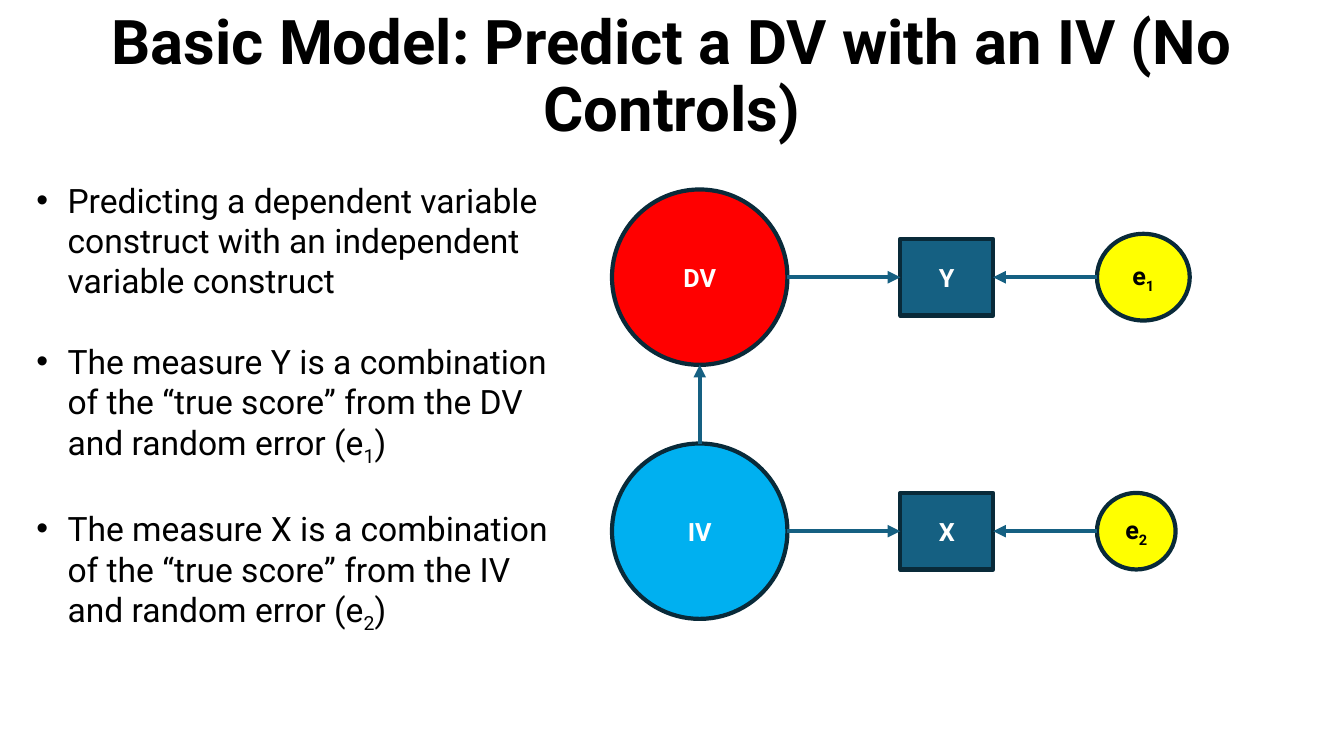
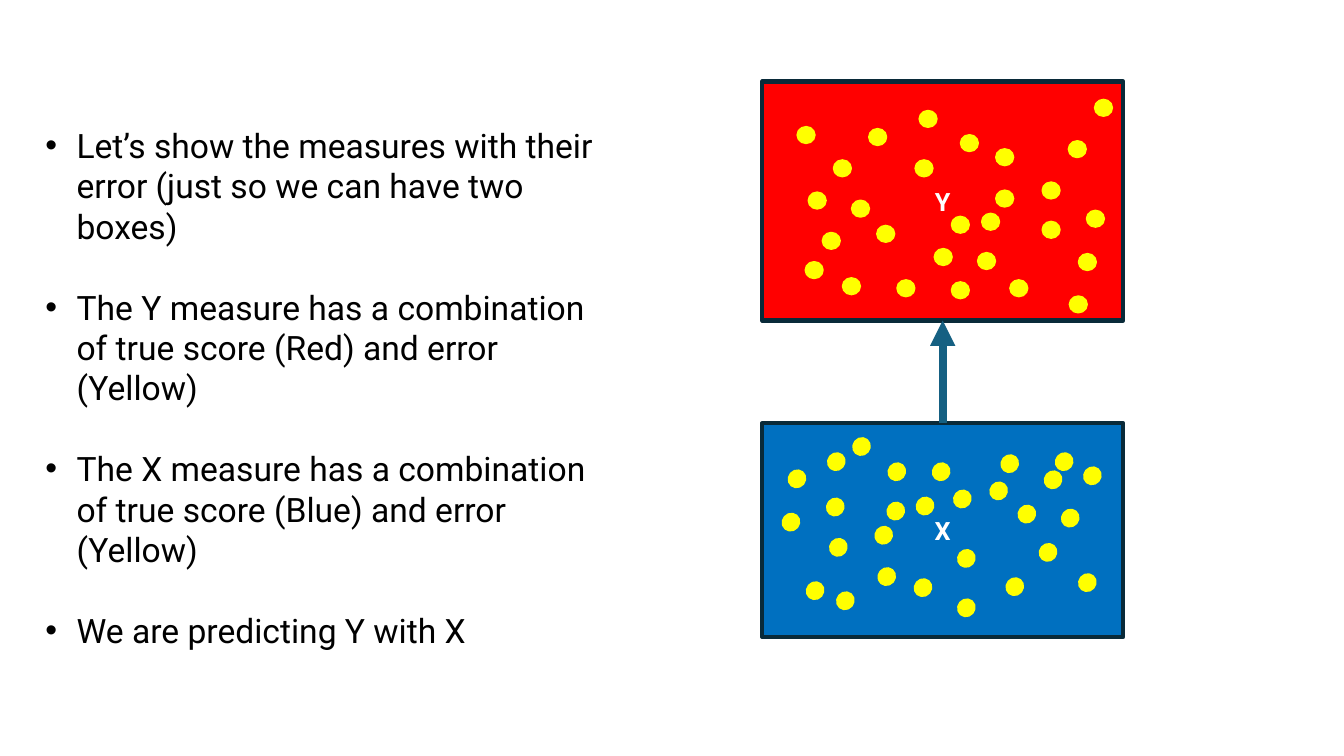
from lxml.etree import SubElement
from pptx import Presentation
from pptx.dml.color import RGBColor
from pptx.enum.shapes import MSO_CONNECTOR, MSO_SHAPE
from pptx.enum.text import MSO_ANCHOR, MSO_AUTO_SIZE, PP_ALIGN
from pptx.oxml.ns import qn
from pptx.util import Pt

PX = 9144  # 100 px to the inch
BLACK = RGBColor(0x00, 0x00, 0x00)
WHITE = RGBColor(0xFF, 0xFF, 0xFF)
RED = RGBColor(0xFF, 0x00, 0x00)
SKY = RGBColor(0x00, 0xB0, 0xF0)
BLUE = RGBColor(0x00, 0x70, 0xC0)
TEAL = RGBColor(0x15, 0x60, 0x82)
NAVY = RGBColor(0x09, 0x2A, 0x39)
YELLOW = RGBColor(0xFF, 0xFF, 0x00)

TITLE_FONT = {"name": "Roboto", "size": Pt(44), "bold": True}
BULLET_FONT = {"name": "Roboto", "size": Pt(24), "bold": False}
LABEL_FONT = {"name": "Roboto", "size": Pt(18), "bold": True}
FRAME = {"word_wrap": True, "auto_size": MSO_AUTO_SIZE.NONE}
RECT, OVAL = MSO_SHAPE.RECTANGLE, MSO_SHAPE.OVAL


def write(paragraph, text, fonts, colour, align, spacing=1.0):
    """Write text; every second part between underscores is a subscript."""
    paragraph.alignment = align
    paragraph.line_spacing = spacing
    for i, part in enumerate(text.split("_")):
        run = paragraph.add_run()
        run.text = part
        for key, value in fonts.items():
            setattr(run.font, key, value)
        run.font.color.rgb = colour
        if i % 2:
            run.font._element.set("baseline", "-25000")


def add_figure(slide, kind, box, fill, label="", ink=WHITE, line=NAVY, weight=3):
    figure = slide.shapes.add_shape(kind, *(v * PX for v in box))
    figure.shadow.inherit = False
    figure.fill.solid()
    figure.fill.fore_color.rgb = fill
    figure.line.color.rgb = line
    figure.line.width = Pt(weight)
    if label:
        figure.text_frame.vertical_anchor = MSO_ANCHOR.MIDDLE
        write(figure.text_frame.paragraphs[0], label, LABEL_FONT, ink, PP_ALIGN.CENTER)
    return figure


deck = Presentation()
deck.slide_width, deck.slide_height = 1333 * PX, 750 * PX

# Titles and bullet lists
pages = [
    ("Basic Model: Predict a DV with an IV (No Controls)", (26, 173, 537, 485), [
        "Predicting a dependent variable construct with an independent variable construct",
        "The measure Y is a combination of the “true score” from the DV and random error (e_1_)",
        "The measure X is a combination of the “true score” from the IV and random error (e_2_)",
    ]),
    (None, (35, 119, 569, 535), [
        "Let’s show the measures with their error (just so we can have two boxes)",
        "The Y measure has a combination of true score (Red) and error (Yellow)",
        "The X measure has a combination of true score (Blue) and error (Yellow)",
        "We are predicting Y with X",
    ]),
]
for heading, list_box, bullets in pages:
    slide = deck.slides.add_slide(deck.slide_layouts[1])
    title, body = slide.placeholders
    for holder, box, anchor in ((title, (0, 5, 1333, 145), MSO_ANCHOR.MIDDLE),
                                (body, list_box, MSO_ANCHOR.TOP)):
        holder.left, holder.top, holder.width, holder.height = (v * PX for v in box)
        for key, value in {**FRAME, "vertical_anchor": anchor}.items():
            setattr(holder.text_frame, key, value)
    if heading:
        write(title.text_frame.paragraphs[0], heading, TITLE_FONT, BLACK,
              PP_ALIGN.CENTER, 0.9)
    else:
        title._element.getparent().remove(title._element)
    for i, bullet in enumerate(bullets):
        item = body.text_frame.add_paragraph() if i else body.text_frame.paragraphs[0]
        props = item._p.get_or_add_pPr()
        props.set("marL", str(31 * PX))
        props.set("indent", str(-31 * PX))
        item.space_before = Pt(29 if i else 0)
        write(item, bullet, BULLET_FONT, BLACK, PP_ALIGN.LEFT)

model, measures = deck.slides
arrows = []  # slide, start, end, shape at start, shape at end, sides, weight

# Model: one row for each construct, its measure and its error
rows = [
    (275, "DV", RED, "Y", "e_1", 92, 86),
    (527, "IV", SKY, "X", "e_2", 78, 76),
]
constructs = []
for mid, construct, fill, measure, error, error_w, error_h in rows:
    constructs.append(add_figure(model, OVAL, (607, mid - 87, 174, 174), fill, construct))
    square = add_figure(model, RECT, (893, mid - 38, 92, 76), TEAL, measure)
    add_figure(model, OVAL, (1088, mid - error_h // 2, error_w, error_h), YELLOW, error, BLACK)
    arrows.append((model, (781, mid), (893, mid), None, square, (0, 1), 3))
    arrows.append((model, (1088, mid), (985, mid), None, square, (0, 3), 3))
arrows.append((model, (694, 440), (694, 362), constructs[1], None, (0, 0), 3))

# Measures: true score boxes sprinkled with error dots
y_dots = [
    (791, 126), (827, 159), (862, 128), (908, 159), (953, 134), (988, 148), (1034, 181),
    (1060, 140), (1086, 99), (988, 189), (890, 278), (836, 276), (799, 260), (816, 231),
    (845, 199), (870, 224), (802, 191), (927, 247), (944, 215), (974, 212), (1034, 220),
    (1078, 209), (1070, 252), (1061, 294), (1002, 278), (970, 251), (944, 280), (912, 110),
]
x_dots = [
    (1070, 570), (1031, 540), (998, 574), (950, 546), (907, 575), (871, 564), (823, 535),
    (800, 578), (830, 588), (868, 523), (993, 452), (1047, 450), (1075, 464), (1036, 468),
    (1010, 502), (982, 479), (1053, 506), (925, 460), (909, 494), (880, 499), (820, 495),
    (776, 510), (782, 467), (821, 450), (846, 435), (881, 460), (946, 487), (950, 595),
]
score_boxes = []
for label, top, height, fill, dots, turn in (("Y", 81, 237, RED, y_dots, 0),
                                             ("X", 420, 212, BLUE, x_dots, 310)):
    score_boxes.append(add_figure(measures, RECT, (756, top, 358, height), fill, label))
    for left, dot_top in dots:
        dot = add_figure(measures, OVAL, (left, dot_top, 17, 16), YELLOW,
                         line=YELLOW, weight=1.5)
        dot.rotation = turn
y_box, x_box = score_boxes
arrows.append((measures, (935, 420), (935, 318), x_box, y_box, (0, 2), 6))

# Arrows
for slide, start, end, source, target, (source_side, target_side), weight in arrows:
    arrow = slide.shapes.add_connector(MSO_CONNECTOR.STRAIGHT, *(v * PX for v in start + end))
    if source:
        arrow.begin_connect(source, source_side)
    if target:
        arrow.end_connect(target, target_side)
    arrow.line.color.rgb = TEAL
    arrow.line.width = Pt(weight)
    SubElement(arrow.line._get_or_add_ln(), qn("a:tailEnd"), type="triangle")
    SubElement(arrow._element.spPr, qn("a:effectLst"))

deck.save("out.pptx")
